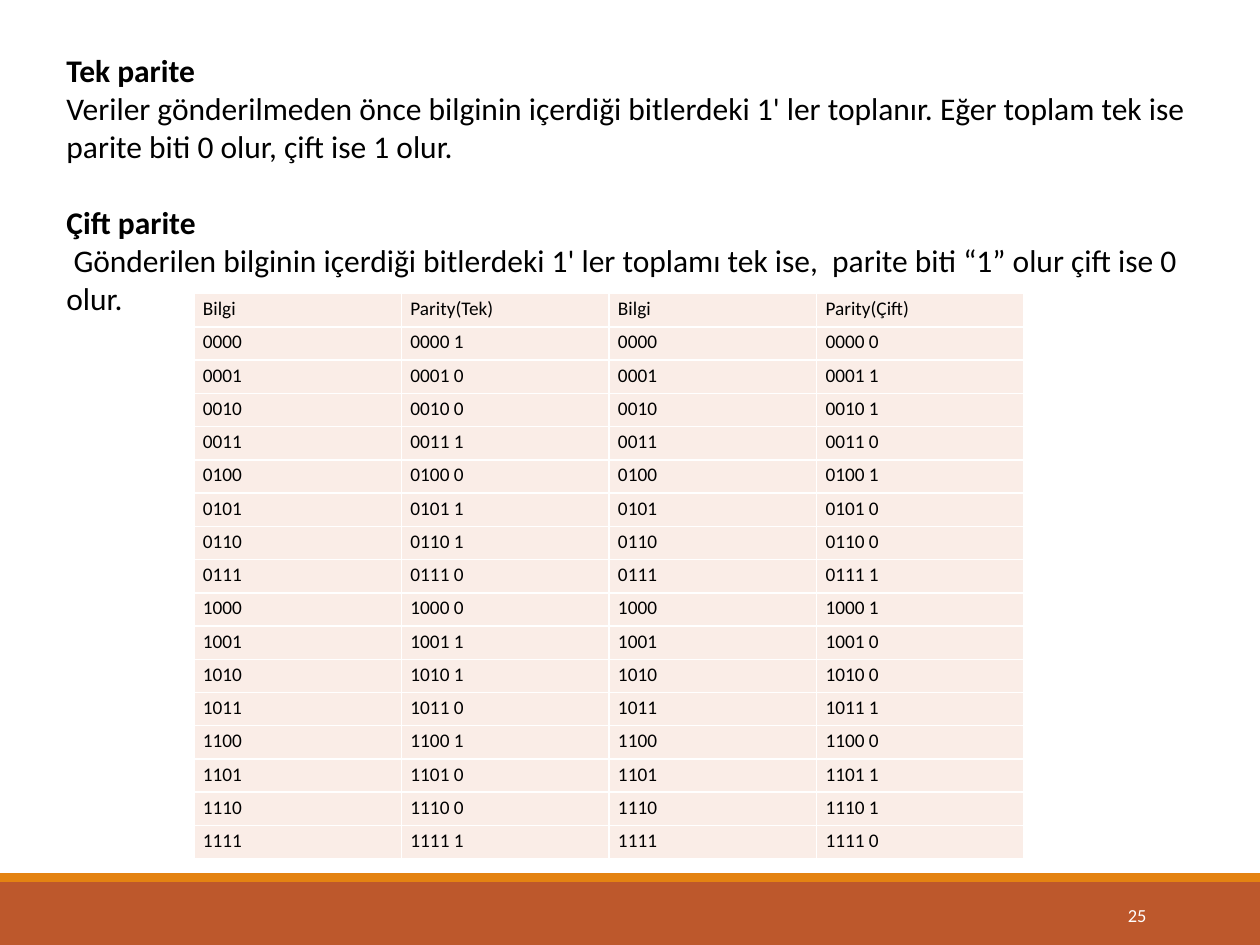
from pptx import Presentation
from pptx.dml.color import RGBColor
from pptx.enum import shapes, text
from pptx.util import Cm, Pt

COLORS = {"band": "BD582C", "stripe": "E48312", "cell": "FAEDE7",
          "ink": "000000", "light": "FFFFFF"}
FONT = "Calibri"

RULES = [
    ("Tek parite",
     "Veriler gönderilmeden önce bilginin içerdiği bitlerdeki 1' ler toplanır. "
     "Eğer toplam tek ise parite biti 0 olur, çift ise 1 olur."),
    ("Çift parite",
     " Gönderilen bilginin içerdiği bitlerdeki 1' ler toplamı tek ise,  "
     "parite biti “1” olur çift ise 0 olur."),
]
HEADERS = ["Bilgi", "Parity(Tek)", "Bilgi", "Parity(Çift)"]


def color(name):
    return RGBColor.from_string(COLORS[name])


def write(p, content, size=18, fill="ink", bold=False, align=None,
          spacing=None, before=None):
    """Fill one paragraph with a formatted run."""
    r = p.add_run()
    r.text = content
    r.font.name, r.font.size, r.font.bold = FONT, Pt(size), bold
    r.font.color.rgb = color(fill)
    p.alignment, p.line_spacing, p.space_before = align, spacing, before


def add_bar(s, x, y, w, h, fill):
    sp = s.shapes.add_shape(shapes.MSO_SHAPE.RECTANGLE, Cm(x), Cm(y), Cm(w), Cm(h))
    sp.shadow.inherit = False
    sp.fill.solid()
    sp.fill.fore_color.rgb = color(fill)
    sp.line.fill.background()


def add_text_box(s, x, y, w, h):
    tf = s.shapes.add_textbox(Cm(x), Cm(y), Cm(w), Cm(h)).text_frame
    tf.word_wrap = True
    return tf


def add_footer(s, x, y, w, h, number):
    stripe_h = 0.18
    add_bar(s, x, y + stripe_h, w, h - stripe_h, "band")
    add_bar(s, x, y, w, stripe_h, "stripe")
    tf = add_text_box(s, x + 20.62, y + 0.33, 2.74, 1.02)
    tf.vertical_anchor = text.MSO_ANCHOR.MIDDLE
    write(tf.paragraphs[0], number, size=10.5, fill="light", align=text.PP_ALIGN.RIGHT)


def add_rules(s, x, y, w, h):
    tf = add_text_box(s, x, y, w, h)
    for i, (heading, body) in enumerate(RULES):
        p = tf.add_paragraph() if i else tf.paragraphs[0]
        write(p, heading, bold=True, before=Pt(22) if i else None)
        write(tf.add_paragraph(), body)


def parity_rows():
    """Every 4-bit word with its odd and even parity bits."""
    for n in range(16):
        bits = f"{n:04b}"
        even = bits.count("1") % 2
        yield [bits, f"{bits} {1 - even}", bits, f"{bits} {even}"]


def add_parity_table(s, x, y, w, h):
    rows = [HEADERS, *parity_rows()]
    tbl = s.shapes.add_table(len(rows), len(HEADERS), Cm(x), Cm(y), Cm(w), Cm(h)).table
    tbl.first_row = tbl.horz_banding = False
    for i, row in enumerate(rows):
        tbl.rows[i].height = Cm(h / len(rows))
        for j, value in enumerate(row):
            cell = tbl.cell(i, j)
            cell.fill.solid()
            cell.fill.fore_color.rgb = color("cell")
            cell.margin_left = cell.margin_right = Cm(0.18)
            cell.margin_top = cell.margin_bottom = 0
            write(cell.text_frame.paragraphs[0], value, size=11, spacing=1.15,
                  align=None if i else text.PP_ALIGN.JUSTIFY)


def main():
    prs = Presentation()
    prs.slide_width, prs.slide_height = Cm(25.4), Cm(19.05)
    s = prs.slides.add_slide(prs.slide_layouts[6])
    # Footer band, parity rules, parity table
    add_footer(s, 0, 17.6, 25.4, 1.45, "25")
    add_rules(s, 1.09, 0.91, 23.39, 6.4)
    add_parity_table(s, 3.91, 5.92, 16.74, 11.4)
    prs.save("out.pptx")


if __name__ == "__main__":
    main()
